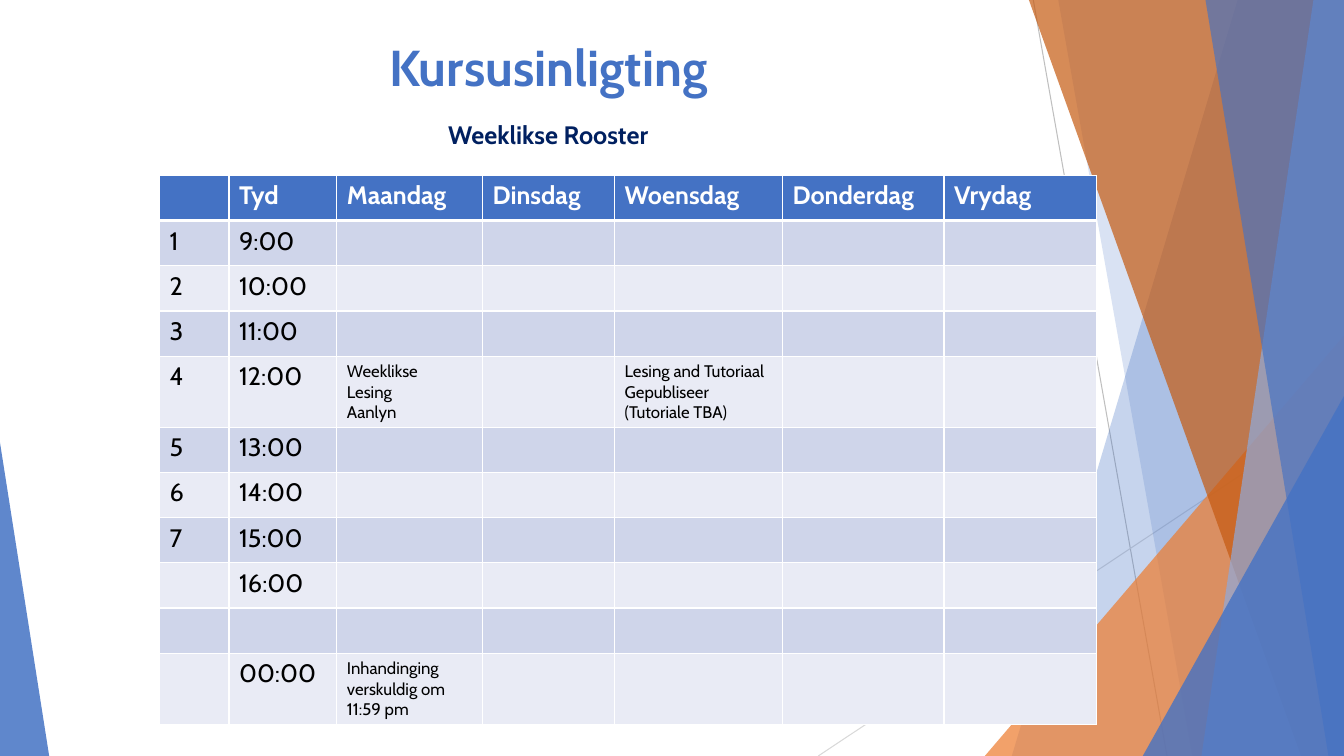
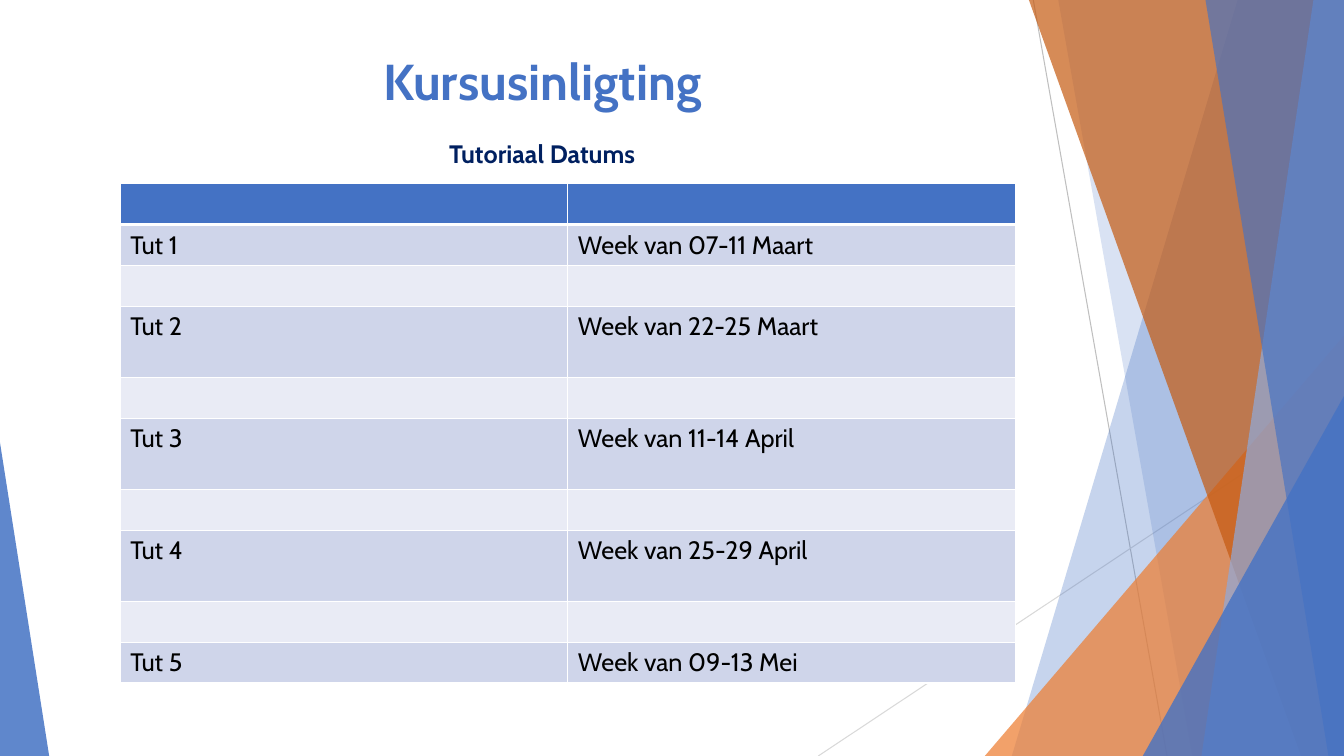
from dataclasses import dataclass

from lxml.etree import SubElement
from pptx import Presentation
from pptx.dml.color import RGBColor
from pptx.enum.shapes import MSO_CONNECTOR, MSO_SHAPE
from pptx.enum.text import MSO_ANCHOR, PP_ALIGN
from pptx.oxml.ns import qn
from pptx.shapes.autoshape import Shape
from pptx.slide import Slide
from pptx.table import _Cell
from pptx.text.text import TextFrame
from pptx.util import Cm, Pt

COLOURS = {
    "blue": "4472C4",
    "light blue": "8FAADC",
    "orange": "ED7D31",
    "dark orange": "C55A11",
    "navy": "002060",
    "odd row": "CFD5EA",
    "even row": "E9EBF5",
    "grey": "BFBFBF",
    "light grey": "D9D9D9",
    "white": "FFFFFF",
    "black": "000000",
}
FONT = "Cabin"
WIDTH, HEIGHT = 33.87, 19.05
TITLE_FORMAT = {"name": FONT, "size": Pt(36), "bold": True}
HEADING_FORMAT = {"name": FONT, "size": Pt(18), "bold": True}
BODY_FORMAT = {"name": FONT, "size": Pt(18), "bold": False}
NOTE_FORMAT = {"name": FONT, "size": Pt(12), "bold": False}


@dataclass(frozen=True)
class Ray:
    start: tuple[float, float]
    end: tuple[float, float]
    colour: str


@dataclass(frozen=True)
class Pane:
    top_x: float
    bottom_x: float
    colour: str
    opacity: int


@dataclass(frozen=True)
class Wedge:
    left: float
    top: float
    right: float
    apex: float
    colour: str
    opacity: int


@dataclass(frozen=True)
class Grid:
    left: float
    top: float
    columns: list[float]
    row_heights: list[float]
    rows: list[list[str]]
    formats: list[dict]


@dataclass(frozen=True)
class Page:
    title_at: tuple[float, float]
    subtitle: str
    subtitle_at: tuple[float, float]
    grid: Grid


RAYS = [
    Ray((26.04, 0), (29.41, HEIGHT), "grey"),
    Ray((WIDTH, 10.24), (20.62, HEIGHT), "light grey"),
]
FACETS = [
    Pane(31.19, 25.5, "blue", 30),
    Pane(26.67, 30.05, "blue", 20),
    Wedge(24.82, 8.46, WIDTH, 1, "orange", 72),
    Pane(25.93, 32.79, "dark orange", 70),
    Pane(33.1, 30.28, "light blue", 70),
    Pane(30.38, 33.48, "blue", 65),
    Wedge(28.8, 9.98, WIDTH, 1, "blue", 80),
    Wedge(0, 11.15, 1.24, 0, "blue", 85),
]

TIMETABLE = Grid(
    left=4.02,
    top=4.42,
    columns=[1.75, 2.72, 3.67, 3.33, 4.23, 4.07, 3.84],
    row_heights=[1.14] * 4 + [1.79] + [1.14] * 5 + [1.79],
    rows=[
        ["", "Tyd", "Maandag", "Dinsdag", "Woensdag", "Donderdag", "Vrydag"],
        ["1", "9:00"],
        ["2", "10:00"],
        ["3", "11:00"],
        ["4", "12:00", "Weeklikse\nLesing\nAanlyn", "",
         "Lesing and Tutoriaal Gepubliseer\n(Tutoriale TBA)"],
        ["5", "13:00"],
        ["6", "14:00"],
        ["7", "15:00"],
        ["", "16:00"],
        [],
        ["", "00:00", "Inhandinging verskuldig om 11:59 pm"],
    ],
    formats=[BODY_FORMAT] * 2 + [NOTE_FORMAT] * 5,
)
TUTORIALS = Grid(
    left=3.03,
    top=4.63,
    columns=[11.28] * 2,
    row_heights=[1.03] * 3 + [1.79, 1.03] * 3 + [1.03],
    rows=[
        [],
        ["Tut 1", "Week van 07-11 Maart"],
        [],
        ["Tut 2", "Week van 22-25 Maart"],
        [],
        ["Tut 3", "Week van 11-14 April"],
        [],
        ["Tut 4", "Week van 25-29 April"],
        [],
        ["Tut 5", "Week van 09-13 Mei"],
    ],
    formats=[BODY_FORMAT] * 2,
)
PAGES = [
    Page((1.88, 0.58), "Weeklikse Rooster", (8.15, 2.87), TIMETABLE),
    Page((1.73, 0.94), "Tutoriaal Datums", (8.0, 3.35), TUTORIALS),
]


def rgb(colour: str) -> RGBColor:
    return RGBColor.from_string(COLOURS[colour])


def format_text(frame: TextFrame, values: dict, colour: str, alignment: PP_ALIGN) -> None:
    for paragraph in frame.paragraphs:
        paragraph.alignment = alignment
        for run in paragraph.runs:
            for name, value in values.items():
                setattr(run.font, name, value)
            run.font.color.rgb = rgb(colour)


def add_ray(slide: Slide, ray: Ray) -> None:
    points = [Cm(value) for value in (*ray.start, *ray.end)]
    connector = slide.shapes.add_connector(MSO_CONNECTOR.STRAIGHT, *points)
    connector.line.color.rgb = rgb(ray.colour)
    connector.line.width = Pt(0.75)
    SubElement(connector._element.spPr, qn("a:effectLst"))


def add_pane(slide: Slide, pane: Pane) -> Shape:
    builder = slide.shapes.build_freeform(Cm(pane.top_x), 0)
    corners = [(WIDTH, 0), (WIDTH, HEIGHT), (pane.bottom_x, HEIGHT)]
    builder.add_line_segments([(Cm(x), Cm(y)) for x, y in corners], close=True)
    return builder.convert_to_shape()


def add_wedge(slide: Slide, wedge: Wedge) -> Shape:
    shape = slide.shapes.add_shape(
        MSO_SHAPE.ISOSCELES_TRIANGLE, Cm(wedge.left), Cm(wedge.top),
        Cm(wedge.right - wedge.left), Cm(HEIGHT - wedge.top),
    )
    shape.adjustments[0] = wedge.apex
    return shape


def add_facet(slide: Slide, facet: Pane | Wedge) -> None:
    draw = add_pane if isinstance(facet, Pane) else add_wedge
    shape = draw(slide, facet)
    shape.shadow.inherit = False
    shape.line.fill.background()
    shape.fill.solid()
    shape.fill.fore_color.rgb = rgb(facet.colour)
    colour = shape._element.spPr.find(qn("a:solidFill"))[0]
    SubElement(colour, qn("a:alpha"), val=str(facet.opacity * 1000))


def add_label(slide: Slide, text: str, place: tuple[float, float],
              size: tuple[float, float], values: dict, colour: str) -> None:
    box = slide.shapes.add_textbox(*(Cm(value) for value in (*place, *size)))
    frame = box.text_frame
    frame.word_wrap = True
    frame.vertical_anchor = MSO_ANCHOR.MIDDLE
    frame.text = text
    format_text(frame, values, colour, PP_ALIGN.CENTER)


def add_borders(cell: _Cell, widths: dict[str, float]) -> None:
    properties = cell._tc.get_or_add_tcPr()
    for side, width in widths.items():
        line = SubElement(properties, qn(f"a:{side}"), w=str(Pt(width)))
        fill = SubElement(line, qn("a:solidFill"))
        SubElement(fill, qn("a:srgbClr"), val=COLOURS["white"])


def add_grid(slide: Slide, grid: Grid) -> None:
    table = slide.shapes.add_table(
        len(grid.rows), len(grid.columns), Cm(grid.left), Cm(grid.top),
        Cm(sum(grid.columns)), Cm(sum(grid.row_heights)),
    ).table
    for column, width in zip(table.columns, grid.columns):
        column.width = Cm(width)
    for index, (row, height) in enumerate(zip(table.rows, grid.row_heights)):
        row.height = Cm(height)
        header = index == 0
        band = "blue" if header else "odd row" if index % 2 else "even row"
        top = 3 if index == 1 else 1
        bottom = 3 if header else 1
        texts = grid.rows[index]
        for position, cell in enumerate(row.cells):
            add_borders(cell, {"lnL": 1, "lnR": 1, "lnT": top, "lnB": bottom})
            cell.fill.solid()
            cell.fill.fore_color.rgb = rgb(band)
            if position < len(texts) and texts[position]:
                cell.text = texts[position]
                values = HEADING_FORMAT if header else grid.formats[position]
                colour = "white" if header else "black"
                format_text(cell.text_frame, values, colour, PP_ALIGN.LEFT)


def add_page(presentation: Presentation, page: Page) -> None:
    slide = presentation.slides.add_slide(presentation.slide_layouts[6])
    for ray in RAYS:
        add_ray(slide, ray)
    for facet in FACETS:
        add_facet(slide, facet)
    add_label(slide, "Kursusinligting", page.title_at, (23.88, 2.18), TITLE_FORMAT, "blue")
    add_label(slide, page.subtitle, page.subtitle_at, (11.33, 1.02), HEADING_FORMAT, "navy")
    add_grid(slide, page.grid)


def main() -> None:
    presentation = Presentation()
    presentation.slide_width = Cm(WIDTH)
    presentation.slide_height = Cm(HEIGHT)
    for page in PAGES:
        add_page(presentation, page)
    presentation.save("out.pptx")


if __name__ == "__main__":
    main()
